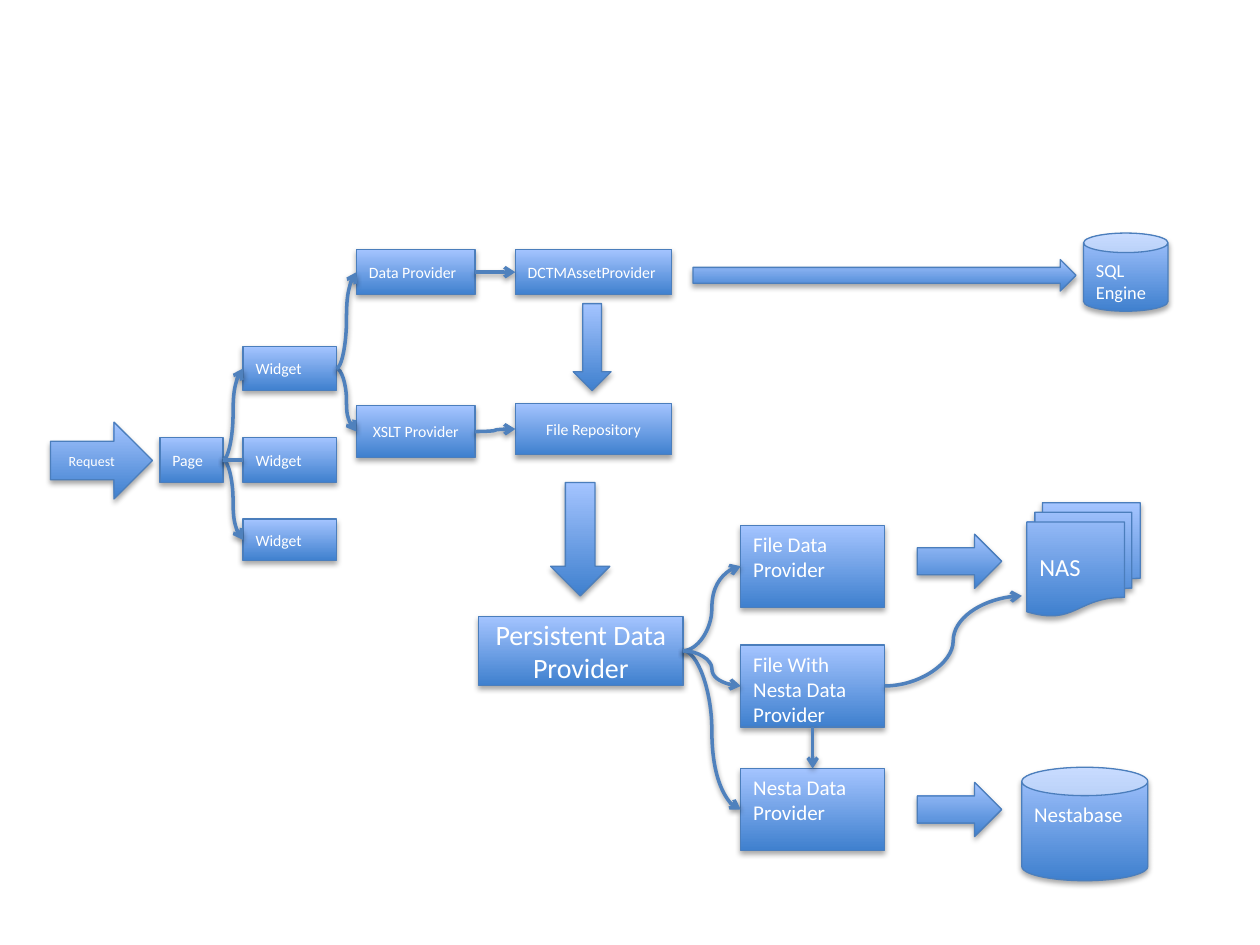
from dataclasses import dataclass

import pptx
import pptx.dml.color
import pptx.enum.shapes
import pptx.enum.text
import pptx.oxml
import pptx.oxml.ns
import pptx.util
from pptx.util import Inches

KIND = pptx.enum.shapes.MSO_SHAPE
CURVE = pptx.enum.shapes.MSO_CONNECTOR.CURVE
STRAIGHT = pptx.enum.shapes.MSO_CONNECTOR.STRAIGHT
ALIGN = pptx.enum.text.PP_ALIGN
ANCHOR = pptx.enum.text.MSO_ANCHOR
TOP, LEFT, BOTTOM, RIGHT = range(4)


@dataclass(frozen=True)
class Theme:
    font: str = "Calibri"
    fill_low: str = "3F80CE"
    fill_high: str = "A4C4FF"
    outline: str = "4B7EBC"
    link: str = "4F81BD"
    text: str = "FFFFFF"
    shadow: str = "000000"
    tiny: float = 8
    small: float = 9
    store: float = 10.5
    body: float = 12
    nas: float = 14
    heading: float = 16


THEME = Theme()


@dataclass(frozen=True)
class Node:
    key: str
    text: str
    left: float
    top: float
    width: float
    height: float
    kind: KIND = KIND.RECTANGLE
    size: float = THEME.small
    centered: bool = False
    anchor: ANCHOR = ANCHOR.MIDDLE


@dataclass(frozen=True)
class Link:
    source: str
    target: str
    begin_side: int = RIGHT
    end_side: int = LEFT
    kind: int = CURVE
    arrow: bool = True


def rgb(value: str) -> pptx.dml.color.RGBColor:
    return pptx.dml.color.RGBColor.from_string(value)


def add_shadow(shape, distance: int, opacity: int) -> None:
    properties = shape._element.spPr
    for old in properties.findall(pptx.oxml.ns.qn("a:effectLst")):
        properties.remove(old)
    properties.append(pptx.oxml.parse_xml(
        f'<a:effectLst {pptx.oxml.ns.nsdecls("a")}>'
        f'<a:outerShdw blurRad="40000" dist="{distance}" dir="5400000" rotWithShape="0">'
        f'<a:srgbClr val="{THEME.shadow}"><a:alpha val="{opacity * 1000}"/></a:srgbClr>'
        '</a:outerShdw></a:effectLst>'))


def write_text(shape, text: str, *, size: float, centered: bool, anchor: ANCHOR) -> None:
    frame = shape.text_frame
    frame.word_wrap = True
    frame.vertical_anchor = anchor
    paragraph = frame.paragraphs[0]
    paragraph.alignment = ALIGN.CENTER if centered else ALIGN.LEFT
    run = paragraph.add_run()
    run.text = text
    run.font.name = THEME.font
    run.font.size = pptx.util.Pt(size)
    run.font.color.rgb = rgb(THEME.text)


def draw_node(slide, node: Node):
    shape = slide.shapes.add_shape(
        node.kind, Inches(node.left), Inches(node.top), Inches(node.width), Inches(node.height))
    shape.shadow.inherit = False
    shape.fill.gradient()
    shape.fill.gradient_angle = 90
    for stop, color in zip(shape.fill.gradient_stops, (THEME.fill_low, THEME.fill_high)):
        stop.color.rgb = rgb(color)
    for stop, position in zip(shape.fill.gradient_stops, (0, 1)):
        stop.position = position
    shape.line.color.rgb = rgb(THEME.outline)
    shape.line.width = pptx.util.Pt(0.75)
    add_shadow(shape, 23000, 35)
    if node.text:
        write_text(shape, node.text, size=node.size, centered=node.centered, anchor=node.anchor)
    return shape


def style_connector(connector, arrow: bool = True) -> None:
    connector.line.color.rgb = rgb(THEME.link)
    connector.line.width = pptx.util.Pt(2)
    if arrow:
        connector.line._get_or_add_ln().append(pptx.oxml.parse_xml(
            f'<a:tailEnd {pptx.oxml.ns.nsdecls("a")} type="arrow"/>'))
    add_shadow(connector, 20000, 38)


def draw_link(slide, link: Link, shapes: dict) -> None:
    connector = slide.shapes.add_connector(link.kind, 0, 0, 0, 0)
    connector.begin_connect(shapes[link.source], link.begin_side)
    connector.end_connect(shapes[link.target], link.end_side)
    style_connector(connector, link.arrow)


def provider(key: str, text: str, top: float) -> Node:
    return Node(key, text, 5.88, top, 1.14, 0.65, size=THEME.body, anchor=ANCHOR.TOP)


def block_arrow(key: str, left: float, top: float, width: float, height: float,
                kind: KIND = KIND.RIGHT_ARROW) -> Node:
    return Node(key, "", left, top, width, height, kind)


NODES = [
    Node("nas", "NAS", 8.15, 3.99, 0.9, 0.9, KIND.FLOWCHART_MULTIDOCUMENT, THEME.nas),
    block_arrow("to_nas", 7.28, 4.24, 0.67, 0.43),
    Node("sql", "SQL Engine", 8.6, 1.85, 0.67, 0.62, KIND.CAN, THEME.store, anchor=ANCHOR.TOP),
    block_arrow("to_sql", 5.5, 2.06, 3.04, 0.25),
    Node("page", "Page", 1.27, 3.47, 0.5, 0.36),
    Node("request", "Request", 0.4, 3.35, 0.81, 0.61, KIND.RIGHT_ARROW, THEME.tiny, True),
    Node("widget_top", "Widget", 1.93, 2.75, 0.74, 0.35),
    Node("widget_middle", "Widget", 1.93, 3.47, 0.74, 0.36),
    Node("widget_bottom", "Widget", 1.93, 4.12, 0.74, 0.33),
    Node("data", "Data Provider", 2.83, 1.98, 0.94, 0.36),
    Node("xslt", "XSLT Provider", 2.83, 3.22, 0.94, 0.41, centered=True),
    Node("repository", "File Repository", 4.09, 3.2, 1.24, 0.41, centered=True),
    Node("assets", "DCTMAssetProvider", 4.09, 1.98, 1.24, 0.36),
    block_arrow("to_repository", 4.55, 2.41, 0.3, 0.69, KIND.DOWN_ARROW),
    Node("persistent", "Persistent Data Provider", 3.8, 4.89, 1.62, 0.55,
         size=THEME.heading, centered=True),
    provider("file", "File Data Provider", 4.17),
    provider("nesta", "Nesta Data Provider", 6.1),
    provider("file_nesta", "File With Nesta Data Provider", 5.12),
    Node("nestabase", "Nestabase", 8.11, 6.09, 1, 0.9, KIND.CAN, THEME.body, anchor=ANCHOR.TOP),
    block_arrow("to_nestabase", 7.28, 6.21, 0.67, 0.43),
    block_arrow("to_persistent", 4.37, 3.83, 0.47, 0.9, KIND.DOWN_ARROW),
]

LINKS = [
    Link("widget_top", "xslt"),
    Link("page", "widget_top"),
    Link("page", "widget_bottom"),
    Link("page", "widget_middle", arrow=False),
    Link("widget_top", "data"),
    Link("data", "assets"),
    Link("xslt", "repository"),
    Link("file_nesta", "nesta", BOTTOM, TOP, STRAIGHT),
    Link("persistent", "file"),
    Link("persistent", "nesta"),
    Link("persistent", "file_nesta"),
]


def main() -> None:
    deck = pptx.Presentation()
    deck.slide_width, deck.slide_height = Inches(10), Inches(7.5)
    slide = deck.slides.add_slide(deck.slide_layouts[6])
    shapes = {node.key: draw_node(slide, node) for node in NODES}
    for link in LINKS:
        draw_link(slide, link, shapes)
    nas_link = slide.shapes.add_connector(
        CURVE, Inches(7.02), Inches(5.44), Inches(8.11), Inches(4.73))
    nas_link.begin_connect(shapes["file_nesta"], RIGHT)
    style_connector(nas_link)
    deck.save("out.pptx")


if __name__ == "__main__":
    main()
